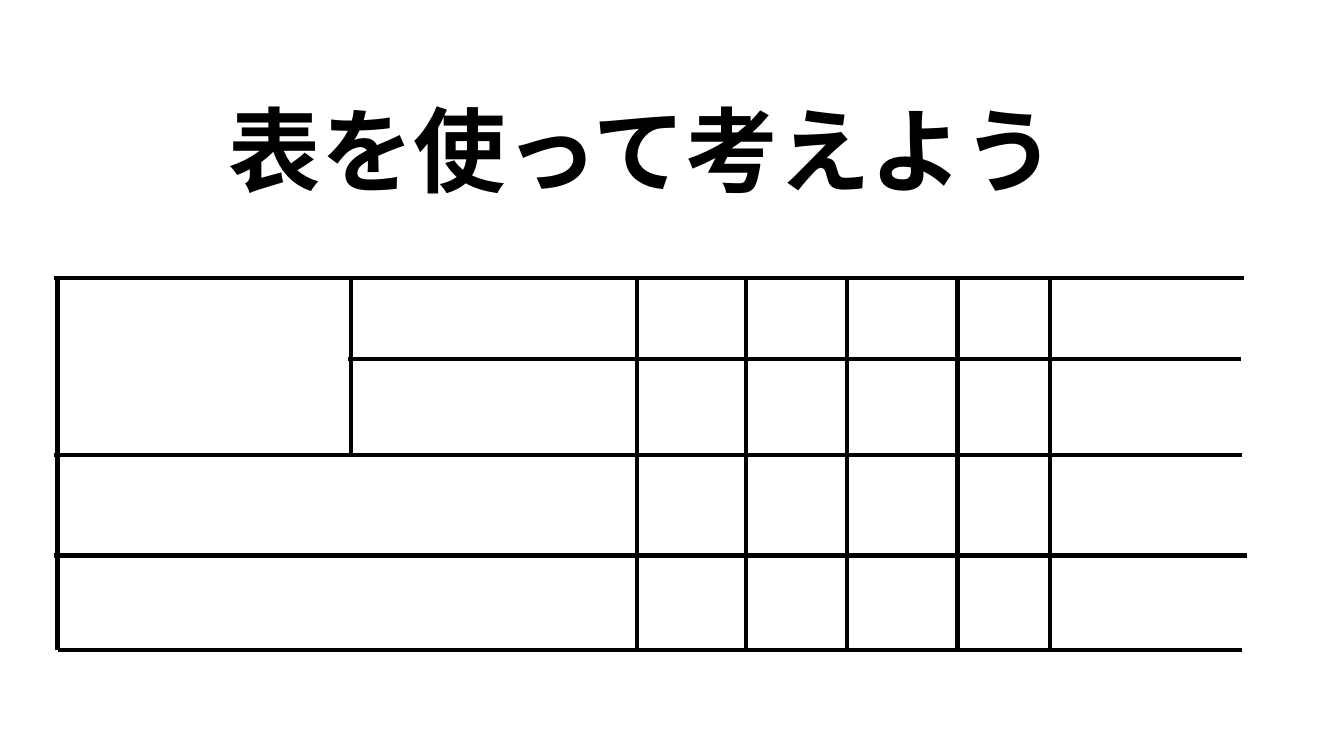
from dataclasses import dataclass

from lxml import etree
from pptx import Presentation
from pptx import util as u
from pptx.dml.color import RGBColor
from pptx.enum import shapes, text
from pptx.oxml.ns import qn
from pptx.shapes.group import GroupShape
from pptx.slide import Slide

BLACK = RGBColor(0, 0, 0)
FONT = "Noto Sans CJK JP"
TITLE_LAYOUT = 5


@dataclass(frozen=True)
class Rule:
    """A straight table rule; all lengths in centimetres."""
    x1: float
    y1: float
    x2: float
    y2: float


def row_rule(y: float, left: float, right: float) -> Rule:
    return Rule(left, y, right, y)


def column_rule(x: float, bottom: float) -> Rule:
    return Rule(x, TOP, x, bottom)


# Table grid
TOP, HEADER_MIDDLE, HEADER_BOTTOM, BODY_MIDDLE, BOTTOM = 7.01, 9.04, 11.46, 14.0, 16.38
ROW_RULES = [
    row_rule(TOP, 1.37, 31.34),
    row_rule(HEADER_MIDDLE, 8.76, 31.27),
    row_rule(HEADER_BOTTOM, 1.37, 31.29),
    row_rule(BODY_MIDDLE, 1.37, 31.42),
    row_rule(BOTTOM, 1.47, 31.29),
]
FULL_COLUMNS = [1.45, 16.05, 18.8, 21.34, 24.13, 26.47]
COLUMN_RULES = [column_rule(8.84, HEADER_BOTTOM)]
COLUMN_RULES += [column_rule(x, BOTTOM) for x in FULL_COLUMNS]


def apply_format(target: object, values: dict[str, object]) -> None:
    for name, value in values.items():
        setattr(target, name, value)


def add_title(page: Slide, wording: str) -> None:
    box = page.shapes.title
    apply_format(box, {"left": u.Cm(5.51), "top": u.Cm(2.21),
                       "width": u.Cm(24.21), "height": u.Cm(3.07)})
    apply_format(box.text_frame, {"word_wrap": True,
                                  "auto_size": text.MSO_AUTO_SIZE.NONE,
                                  "vertical_anchor": text.MSO_ANCHOR.MIDDLE})
    para = box.text_frame.paragraphs[0]
    para.alignment = text.PP_ALIGN.LEFT
    span = para.add_run()
    span.text = wording
    apply_format(span.font, {"name": FONT, "size": u.Pt(66), "bold": True})
    span.font.color.rgb = BLACK
    # East Asian typeface
    etree.SubElement(span.font._element, qn("a:ea"), typeface=FONT)


def draw_rule(table: GroupShape, rule: Rule) -> None:
    line = table.shapes.add_connector(
        shapes.MSO_CONNECTOR.STRAIGHT,
        u.Cm(rule.x1), u.Cm(rule.y1), u.Cm(rule.x2), u.Cm(rule.y2))
    line.line.width = u.Pt(3)
    line.line.color.rgb = BLACK
    etree.SubElement(line._element.spPr, qn("a:effectLst"))


def main() -> None:
    deck = Presentation()
    apply_format(deck, {"slide_width": u.Cm(33.87), "slide_height": u.Cm(19.05)})
    page = deck.slides.add_slide(deck.slide_layouts[TITLE_LAYOUT])

    # Heading
    add_title(page, "表を使って考えよう")

    # Empty table drawn with rules
    table = page.shapes.add_group_shape()
    for rule in ROW_RULES + COLUMN_RULES:
        draw_rule(table, rule)

    deck.save("out.pptx")


if __name__ == "__main__":
    main()
